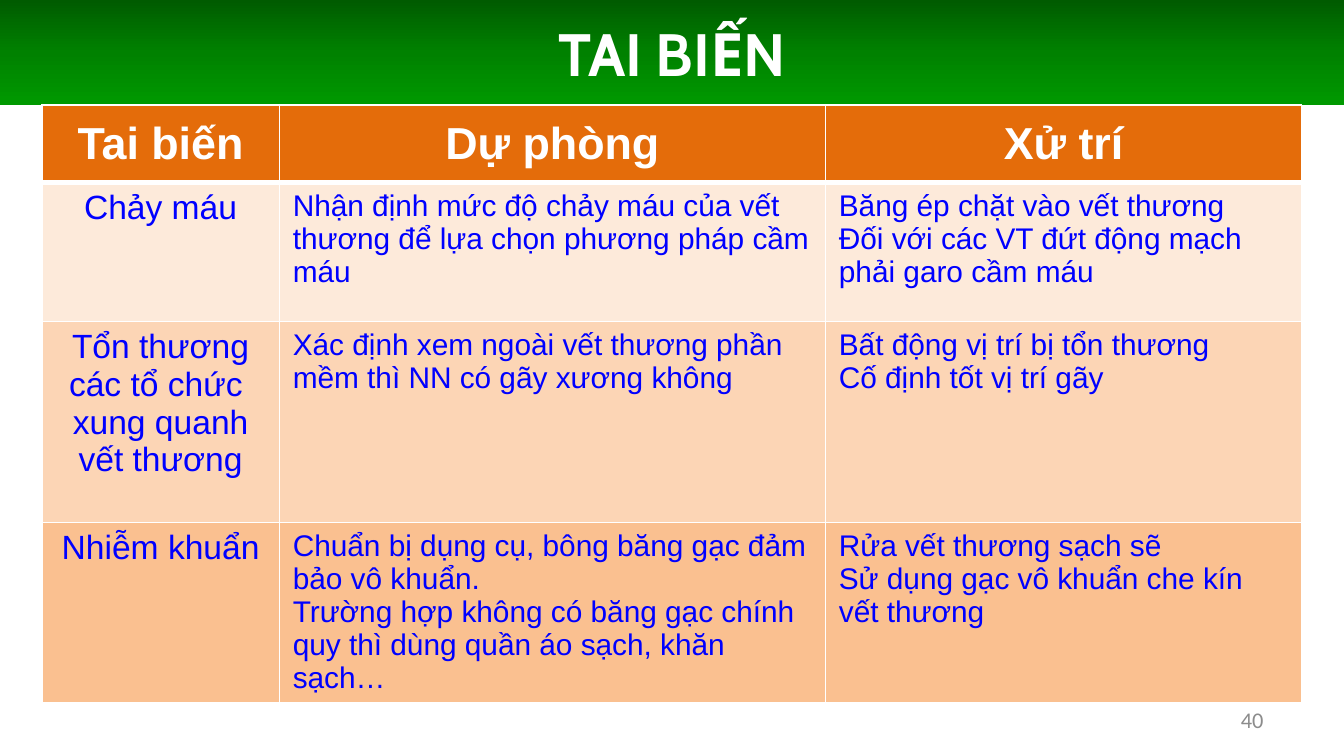
from copy import deepcopy
from typing import NamedTuple

from lxml.etree import SubElement
from pptx import Presentation
from pptx.dml.color import RGBColor
from pptx.enum.text import MSO_ANCHOR as Anchor, PP_ALIGN as Align
from pptx.oxml.ns import qn
from pptx.util import Cm, Pt

WHITE = RGBColor(0xFF, 0xFF, 0xFF)
GRAY = RGBColor(0x8C, 0x8C, 0x8C)
BLUE = RGBColor(0x00, 0x00, 0xFF)
ORANGE = RGBColor(0xE4, 0x6C, 0x0A)
PALE = RGBColor(0xFD, 0xEA, 0xDA)
PEACH = RGBColor(0xFC, 0xD5, 0xB5)
APRICOT = RGBColor(0xFA, 0xC0, 0x90)
GREENS = [
    (0, RGBColor(0x00, 0x5B, 0x00)),
    (0.5, RGBColor(0x00, 0x81, 0x00)),
    (1, RGBColor(0x00, 0x99, 0x00)),
]
COLS = (4.49, 10.32, 9)


class Row(NamedTuple):
    high: float
    fill: RGBColor
    texts: tuple[str, str, str]


HEAD = Row(1.47, ORANGE, ("Tai biến", "Dự phòng", "Xử trí"))
BODY = [
    Row(2.63, PALE, (
        "Chảy máu",
        "Nhận định mức độ chảy máu của vết thương để lựa chọn phương pháp cầm máu",
        "Băng ép chặt vào vết thương\n"
        "Đối với các VT đứt động mạch phải garo cầm máu",
    )),
    Row(3.8, PEACH, (
        "Tổn thương các tổ chức  xung quanh vết thương",
        "Xác định xem ngoài vết thương phần mềm thì NN có gãy xương không",
        "Bất động vị trí bị tổn thương\nCố định tốt vị trí gãy",
    )),
    Row(3.41, APRICOT, (
        "Nhiễm khuẩn",
        "Chuẩn bị dụng cụ, bông băng gạc đảm bảo vô khuẩn.\n"
        "Trường hợp không có băng gạc chính quy thì dùng quần áo sạch, khăn sạch…",
        "Rửa vết thương sạch sẽ\nSử dụng gạc vô khuẩn che kín vết thương",
    )),
]


def write(frame, text: str, *, size: int, color: RGBColor, font: str = "Arial",
          bold: bool = False, align: Align = Align.LEFT) -> None:
    frame.word_wrap = True
    frame.text = text
    for para in frame.paragraphs:
        para.alignment = align
        style = para.runs[0].font
        style.name, style.size, style.bold = font, Pt(size), bold
        style.color.rgb = color


def shade(shape) -> None:
    """Fill the shape with the greens, dark at the top."""
    shape.fill.gradient()
    shape.fill.gradient_angle = 270
    stops = shape._element.spPr.find(".//" + qn("a:gsLst"))
    stops.append(deepcopy(stops[0]))
    for stop, (pos, color) in zip(shape.fill.gradient_stops, GREENS):
        stop.position = pos
        stop.color.rgb = color


def edge(cell, **widths: float) -> None:
    """Draw white borders; the keys are the sides L, R, T and B, in that order."""
    props = cell._tc.get_or_add_tcPr()
    for side, width in widths.items():
        line = SubElement(props, qn(f"a:ln{side}"), w=str(Pt(width)))
        fill = SubElement(line, qn("a:solidFill"))
        SubElement(fill, qn("a:srgbClr"), val=str(WHITE))


def add_title(slide) -> None:
    title = slide.shapes.title
    title.left, title.top, title.width, title.height = Cm(0), Cm(0), Cm(25.4), Cm(1.98)
    shade(title)
    title.text_frame.vertical_anchor = Anchor.MIDDLE
    write(title.text_frame, "TAI BIẾN", size=32, color=WHITE, font="Cabin",
          bold=True, align=Align.CENTER)


def add_grid(slide) -> None:
    rows = [HEAD, *BODY]
    table = slide.shapes.add_table(
        len(rows), len(COLS), Cm(0.79), Cm(1.98),
        Cm(sum(COLS)), Cm(sum(row.high for row in rows))).table
    for col, wide in zip(table.columns, COLS):
        col.width = Cm(wide)
    for r, row in enumerate(rows):
        table.rows[r].height = Cm(row.high)
        for c, text in enumerate(row.texts):
            cell = table.cell(r, c)
            edge(cell, L=1, R=1, T=3 if r == 1 else 1, B=3 if r == 0 else 1)
            cell.fill.solid()
            cell.fill.fore_color.rgb = row.fill
            if row is HEAD:
                cell.vertical_anchor = Anchor.MIDDLE
                write(cell.text_frame, text, size=24, color=WHITE, bold=True,
                      align=Align.CENTER)
                continue
            # Without a lower margin the five-line cell keeps to its row height.
            cell.margin_bottom = Cm(0)
            if c == 0:
                write(cell.text_frame, text, size=18, color=BLUE, align=Align.CENTER)
            else:
                write(cell.text_frame, text, size=16, color=BLUE)


def add_page(slide) -> None:
    box = slide.shapes.add_textbox(Cm(18.21), Cm(13.23), Cm(5.92), Cm(0.76))
    box.text_frame.vertical_anchor = Anchor.MIDDLE
    write(box.text_frame, "40", size=12, color=GRAY, font="Calibri", align=Align.RIGHT)


def main() -> None:
    deck = Presentation()
    deck.slide_width, deck.slide_height = Cm(25.4), Cm(14.29)
    slide = deck.slides.add_slide(deck.slide_layouts[5])
    add_title(slide)
    add_grid(slide)
    add_page(slide)
    deck.save("out.pptx")


if __name__ == "__main__":
    main()
